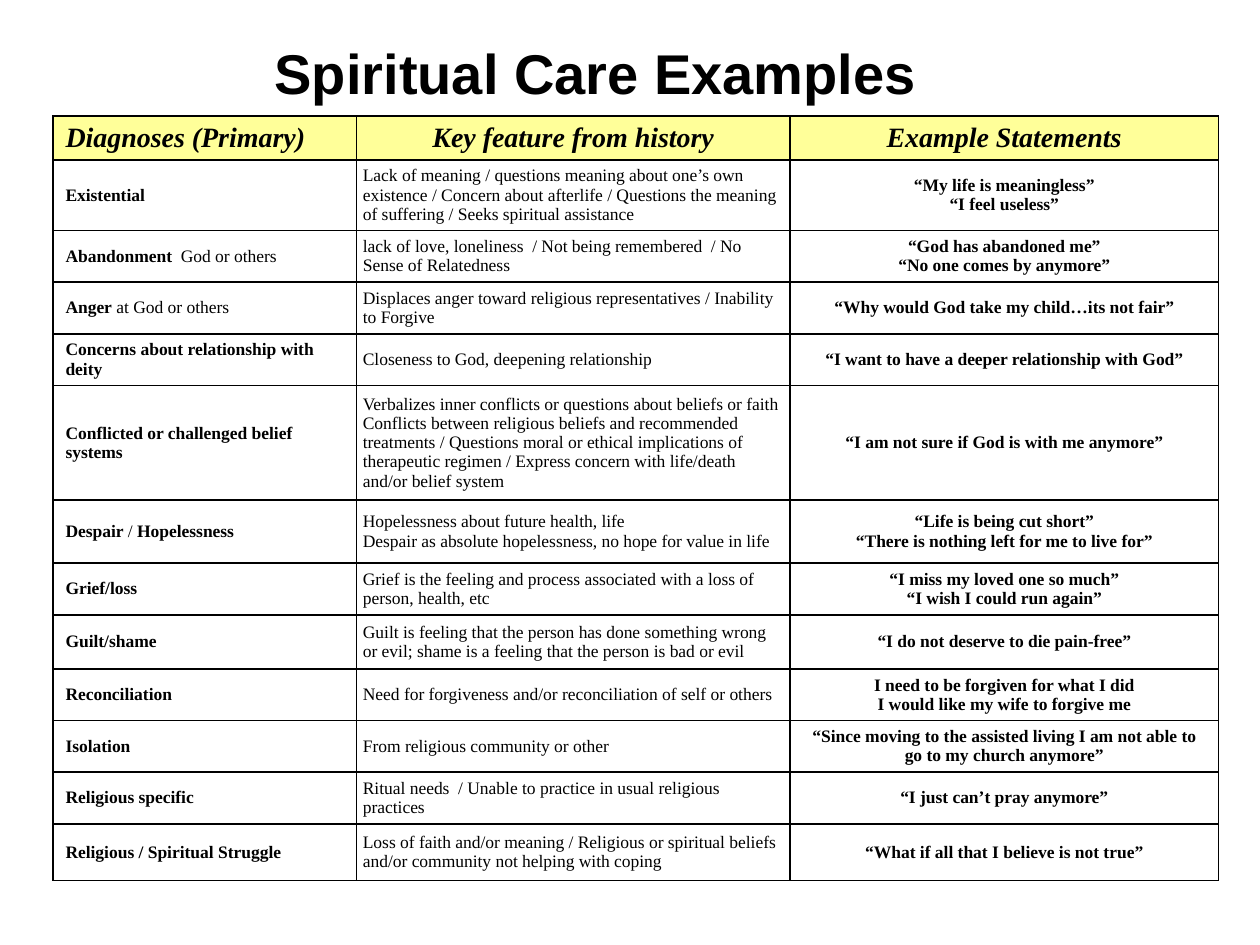
import pptx
import pptx.dml.color
import pptx.enum.text
import pptx.oxml
import pptx.oxml.ns
import pptx.util

Inches = pptx.util.Inches
Align = pptx.enum.text.PP_ALIGN
Anchor = pptx.enum.text.MSO_ANCHOR

# Content
TITLE = "Spiritual Care Examples"
HEADERS = ["Diagnoses (Primary)", "Key feature from history", "Example Statements"]

# Row height, diagnosis (bold and plain runs alternate), feature lines, statement lines
ROWS = [
    (0.56, ["Existential"],
     ["Lack of meaning / questions meaning about one’s own existence / Concern about "
      "afterlife / Questions the meaning of suffering / Seeks spiritual assistance"],
     ["“My life is meaningless”", "“I feel useless”"]),
    (0.41, ["Abandonment", "  God or others"],
     ["lack of love, loneliness  / Not being remembered  / No Sense of Relatedness"],
     ["“God has abandoned me”", "“No one comes by anymore”"]),
    (0.41, ["Anger", " at God or others"],
     ["Displaces anger toward religious representatives / Inability to Forgive"],
     ["“Why would God take my child…its not fair”"]),
    (0.41, ["Concerns about relationship with deity"],
     ["Closeness to God, deepening relationship"],
     ["“I want to have a deeper relationship with God”"]),
    (0.91, ["Conflicted or challenged belief systems"],
     ["Verbalizes inner conflicts or questions about beliefs or faith Conflicts between "
      "religious beliefs and recommended treatments / Questions moral or ethical "
      "implications of therapeutic regimen / Express concern with life/death and/or "
      "belief system"],
     ["“I am not sure if God is with me anymore”"]),
    (0.5, ["Despair", " / ", "Hopelessness"],
     ["Hopelessness about future health, life",
      "Despair as absolute hopelessness, no hope for value in life"],
     ["“Life is being cut short”", "“There is nothing left for me to live for”"]),
    (0.41, ["Grief/loss"],
     ["Grief is the feeling and process associated with a loss of person, health, etc"],
     ["“I miss my loved one so much”", "“I wish I could run again”"]),
    (0.43, ["Guilt/shame"],
     ["Guilt is feeling that the person has done something wrong or evil; shame is a "
      "feeling that the person is bad or evil"],
     ["“I do not deserve to die pain-free”"]),
    (0.41, ["Reconciliation"],
     ["Need for forgiveness and/or reconciliation of self or others"],
     ["I need to be forgiven for what I did", "I would like my wife to forgive me"]),
    (0.41, ["Isolation"],
     ["From religious community or other"],
     ["“Since moving to the assisted living I am not able to go to my church anymore”"]),
    (0.41, ["Religious specific"],
     ["Ritual needs  / Unable to practice in usual religious practices"],
     ["“I just can’t pray anymore”"]),
    (0.45, ["Religious / Spiritual Struggle"],
     ["Loss of faith and/or meaning / Religious or spiritual beliefs and/or community "
      "not helping with coping"],
     ["“What if all that I believe is not true”"]),
]

# Theme and layout
THEME = {
    "ink": "000000", "header_fill": "FFFF99", "body_fill": "FFFFFF", "border": 1,
    "title": {"name": "Arial", "size": 32, "bold": True},
    "header": {"name": "Times New Roman", "size": 16, "bold": True, "italic": True},
    "strong": {"name": "Times New Roman", "size": 10, "bold": True},
    "plain": {"name": "Times New Roman", "size": 10, "bold": False},
}
TITLE_BOX = {"left": 2.08, "top": 0.25, "width": 6.5, "height": 0.64}
TABLE_LEFT, TABLE_TOP = 0.42, 0.92
COLUMN_WIDTHS = [2.41, 3.44, 3.4]
HEADER_HEIGHT = 0.35
ALIGNMENTS = [Align.LEFT, Align.LEFT, Align.CENTER]
HEADER_ALIGNMENTS = [Align.LEFT, Align.CENTER, Align.CENTER]
SIDE_MARGINS = [0.1, 0.05, 0.1]


def color(value):
    return pptx.dml.color.RGBColor.from_string(value)


def write(text_frame, paragraphs, alignment):
    """Each paragraph is a list of (text, style name) runs."""
    for index, runs in enumerate(paragraphs):
        paragraph = text_frame.paragraphs[0] if index == 0 else text_frame.add_paragraph()
        paragraph.alignment = alignment
        for text, style in runs:
            run = paragraph.add_run()
            run.text = text
            for name, value in THEME[style].items():
                setattr(run.font, name, pptx.util.Pt(value) if name == "size" else value)
            run.font.color.rgb = color(THEME["ink"])


def add_borders(cell):
    properties = cell._tc.get_or_add_tcPr()
    for position, side in enumerate(("lnL", "lnR", "lnT", "lnB")):
        properties.insert(position, pptx.oxml.parse_xml(
            f'<a:{side} {pptx.oxml.ns.nsdecls("a")} w="{pptx.util.Pt(THEME["border"])}">'
            f'<a:solidFill><a:srgbClr val="{THEME["ink"]}"/></a:solidFill></a:{side}>'))


def fill_cell(cell, paragraphs, alignment, fill, side_margin):
    formats = {"vertical_anchor": Anchor.MIDDLE,
               "margin_left": Inches(side_margin), "margin_right": Inches(side_margin),
               "margin_top": Inches(0.05), "margin_bottom": Inches(0.05)}
    for name, value in formats.items():
        setattr(cell, name, value)
    cell.fill.solid()
    cell.fill.fore_color.rgb = color(fill)
    add_borders(cell)
    write(cell.text_frame, paragraphs, alignment)


def add_title(slide):
    title = slide.shapes.title
    for name, value in TITLE_BOX.items():
        setattr(title, name, Inches(value))
    title.text_frame.word_wrap = True
    title.text_frame.vertical_anchor = Anchor.MIDDLE
    write(title.text_frame, [[(TITLE, "title")]], Align.LEFT)


def add_care_table(slide):
    heights = [HEADER_HEIGHT] + [row[0] for row in ROWS]
    table = slide.shapes.add_table(
        len(heights), len(COLUMN_WIDTHS), Inches(TABLE_LEFT), Inches(TABLE_TOP),
        Inches(sum(COLUMN_WIDTHS)), Inches(sum(heights))).table
    for column, width in zip(table.columns, COLUMN_WIDTHS):
        column.width = Inches(width)
    for row, height in zip(table.rows, heights):
        row.height = Inches(height)

    # Header row
    for column, text in enumerate(HEADERS):
        fill_cell(table.cell(0, column), [[(text, "header")]], HEADER_ALIGNMENTS[column],
                  THEME["header_fill"], 0.1)

    # Diagnosis rows
    for row, (_, diagnosis, features, statements) in enumerate(ROWS, start=1):
        contents = [
            [[(text, ("strong", "plain")[index % 2]) for index, text in enumerate(diagnosis)]],
            [[(line, "plain")] for line in features],
            [[(line, "strong")] for line in statements],
        ]
        for column, paragraphs in enumerate(contents):
            fill_cell(table.cell(row, column), paragraphs, ALIGNMENTS[column],
                      THEME["body_fill"], SIDE_MARGINS[column])


def main():
    presentation = pptx.Presentation()
    presentation.slide_width, presentation.slide_height = Inches(10), Inches(7.5)
    slide = presentation.slides.add_slide(presentation.slide_layouts[5])
    add_title(slide)
    add_care_table(slide)
    presentation.save("out.pptx")


if __name__ == "__main__":
    main()
